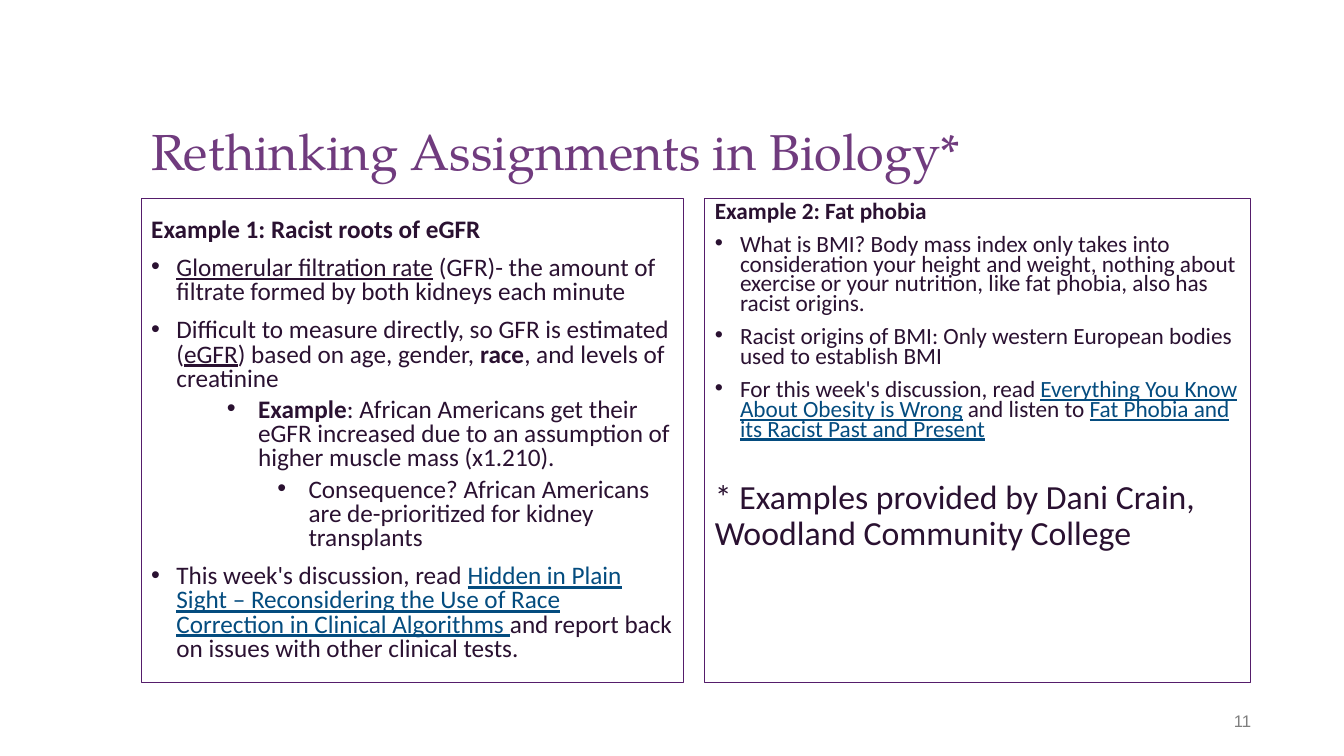
from lxml import etree
from pptx import Presentation
from pptx import util as u
from pptx.dml.color import RGBColor
from pptx.enum import text
from pptx.oxml import ns

HUES = {"title": "703B7E", "ink": "2A1131", "link": "044C7F",
        "edge": "551D6B", "page": "7F7F7F"}
BODY = "Calibri"

# Each paragraph: kind, then runs of (words, style); b bold, u underlined, k link
LEFT = [
    ("head", [("Example 1: Racist roots of eGFR", "b")]),
    ("item", [("Glomerular filtration rate", "u"),
              (" (GFR)- the amount of filtrate formed by both kidneys each minute", "")]),
    ("item", [("Difficult to measure directly, so GFR is estimated (", ""),
              ("eGFR", "u"), (") based on age, gender, ", ""),
              ("race", "b"), (", and levels of creatinine", "")]),
    ("sub", [("Example", "b"),
             (": African Americans get their eGFR increased due to an "
              "assumption of higher muscle mass (x1.210).", "")]),
    ("deep", [("Consequence? African Americans are de-prioritized for "
               "kidney transplants", "")]),
    ("item", [("This week's discussion, read ", ""),
              ("Hidden in Plain Sight – Reconsidering the Use of "
               "Race Correction in Clinical Algorithms ", "uk"),
              ("and report back on issues with other clinical tests.", "")]),
]
RIGHT = [
    ("head", [("Example 2: Fat phobia", "b")]),
    ("item", [("What is BMI? Body mass index only takes into consideration "
               "your height and weight, nothing about exercise or your "
               "nutrition, like fat phobia, also has racist origins.", "")]),
    ("item", [("Racist origins of BMI: Only western European bodies used to "
               "establish BMI", "")]),
    ("item", [("For this week's discussion, read ", ""),
              ("Everything You Know About Obesity is Wrong", "uk"),
              (" and listen to ", ""),
              ("Fat Phobia and its Racist Past and Present", "uk")]),
    ("note", [("* Examples provided by Dani Crain, Woodland Community College", "")]),
]

# Kind: level, left margin, hanging indent, space before, bullet
KINDS = {
    "head": (0, 0, 0, 0, False),
    "item": (0, 0.25, -0.25, 10, True),
    "sub": (1, 1.06, -0.31, 5, True),
    "deep": (2, 1.56, -0.31, 5, True),
    "note": (0, 0, 0, 28, False),
}


def put(obj, vals):
    for key, val in vals.items():
        setattr(obj, key, val)


def place(shape, box):
    put(shape, dict(zip(("left", "top", "width", "height"), map(u.Inches, box))))


def write(para, words, size, face, hue, **more):
    run = para.add_run()
    run.text = words
    put(run.font, {"size": u.Pt(size), "name": face, **more})
    run.font.color.rgb = RGBColor.from_string(HUES[hue])


def indent(para, left, hang, mark):
    props = para._p.get_or_add_pPr()
    props.set("marL", str(u.Inches(left)))
    props.set("indent", str(u.Inches(hang)))

    def add(parent, tag, **attrs):
        return etree.SubElement(parent, ns.qn(tag), **attrs)

    if mark:
        add(add(props, "a:buClr"), "a:srgbClr", val=HUES["ink"])
        add(props, "a:buFont", typeface="Arial")
        add(props, "a:buChar", char="•")
    else:
        add(props, "a:buNone")


def title(shape, box, words):
    place(shape, box)
    put(shape.text_frame, {"vertical_anchor": text.MSO_ANCHOR.BOTTOM,
                           "auto_size": text.MSO_AUTO_SIZE.NONE,
                           "word_wrap": True})
    para = shape.text_frame.paragraphs[0]
    put(para, {"alignment": text.PP_ALIGN.LEFT, "line_spacing": 0.9})
    write(para, words, 36, "TeX Gyre Pagella", "title")


def panel(shape, box, paras, size, lead, anchor):
    place(shape, box)
    shape.line.color.rgb = RGBColor.from_string(HUES["edge"])
    shape.line.width = u.Pt(0.75)
    frame = shape.text_frame
    put(frame, {"vertical_anchor": anchor, "word_wrap": True,
                "auto_size": text.MSO_AUTO_SIZE.NONE})
    for num, (kind, runs) in enumerate(paras):
        para = frame.add_paragraph() if num else frame.paragraphs[0]
        level, left, hang, gap, mark = KINDS[kind]
        note = kind == "note"
        indent(para, left, hang, mark)
        put(para, {"level": level, "space_before": u.Pt(gap),
                   "space_after": u.Pt(0),
                   "line_spacing": 0.9 if note else lead,
                   "alignment": text.PP_ALIGN.LEFT})
        for words, style in runs:
            write(para, words, 24.1 if note else size, BODY,
                  "link" if "k" in style else "ink",
                  bold="b" in style, underline="u" in style)


def number(slide, box, words):
    frame = slide.shapes.add_textbox(*map(u.Inches, box)).text_frame
    put(frame, {"vertical_anchor": text.MSO_ANCHOR.MIDDLE,
                "word_wrap": True, "margin_right": 0})
    para = frame.paragraphs[0]
    para.alignment = text.PP_ALIGN.RIGHT
    write(para, words, 12, "Arial", "page")


def main():
    deck = Presentation()
    put(deck, {"slide_width": u.Inches(13.33), "slide_height": u.Inches(7.5)})
    slide = deck.slides.add_slide(deck.slide_layouts[3])
    head, first, second = slide.placeholders
    title(head, (1.4, 0.4, 10.99, 1.45), "Rethinking Assignments in Biology*")
    # Two example panels
    panel(first, (1.4, 1.97, 5.38, 4.8), LEFT, 18, 0.8, text.MSO_ANCHOR.MIDDLE)
    panel(second, (6.99, 1.97, 5.41, 4.8), RIGHT, 16.6, 0.7, text.MSO_ANCHOR.TOP)
    number(slide, (11.41, 6.95, 1, 0.4), "11")
    deck.save("out.pptx")


if __name__ == "__main__":
    main()
